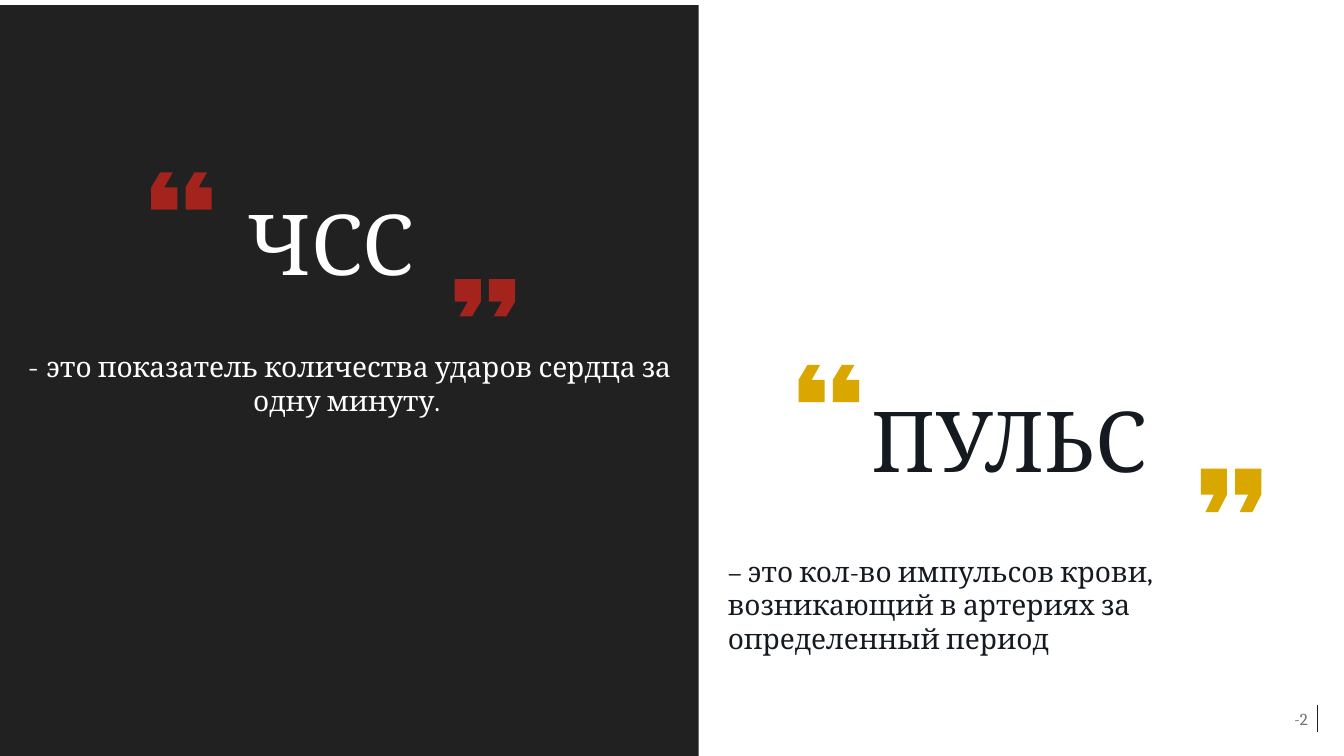
"""Build the slide that sets heart rate beside pulse."""
from lxml.etree import SubElement
from pptx import Presentation
from pptx.dml.color import RGBColor
from pptx.enum.shapes import MSO_CONNECTOR, MSO_SHAPE
from pptx.enum.text import MSO_ANCHOR, MSO_AUTO_SIZE, PP_ALIGN
from pptx.oxml.ns import qn
from pptx.util import Inches, Pt

COLORS = {
    "panel": "212121",
    "white": "FFFFFF",
    "ink": "151A20",
    "grey": "767171",
    "red": "DE241C",
    "gold": "DAA600",
}
PANEL = (0, 0.05, 6.93, 7.5)
RATE_RUNS = [
    ("- ", "Quicksand"),
    ("это показатель количества ударов сердца за одну минуту. ", "Cambria"),
]
TEXTS = [
    {"text": "ЧСС", "at": (2.36, 1.71, 2.09, 1.5), "size": 60, "color": "white",
     "anchor": MSO_ANCHOR.MIDDLE, "spacing": 0.9},
    {"text": "ПУЛЬС", "at": (8.55, 3.8, 3.15, 1.11), "size": 60, "color": "ink",
     "wrap": False, "fit": MSO_AUTO_SIZE.SHAPE_TO_FIT_TEXT},
    {"text": "– это кол-во импульсов крови, возникающий в артериях за определенный период",
     "at": (7.12, 5.45, 6.2, 0.77), "size": 20, "color": "ink",
     "fit": MSO_AUTO_SIZE.SHAPE_TO_FIT_TEXT},
    {"text": "-2", "at": (12.18, 6.98, 0.89, 0.4), "size": 12, "color": "grey",
     "align": PP_ALIGN.RIGHT},
]
QUOTES = [
    {"at": (1.5, 1.71), "height": 0.37, "color": "red", "opacity": 70, "opening": True},
    {"at": (4.51, 2.77), "height": 0.37, "color": "red", "opacity": 70, "opening": False},
    {"at": (11.91, 4.65), "height": 0.43, "color": "gold", "opacity": 100, "opening": False},
    {"at": (7.92, 3.62), "height": 0.37, "color": "gold", "opacity": 100, "opening": True},
]
MARK_WIDTH = 0.26
MARK_STEP = 0.34
MARK_OUTLINE = [(0, 0), (0, 0.6), (0.5, 0.6), (0.18, 1), (0.66, 1), (1, 0.6), (1, 0)]


def color_of(name):
    return RGBColor.from_string(COLORS[name])


def paint(shape, color):
    shape.shadow.inherit = False
    shape.fill.solid()
    shape.fill.fore_color.rgb = color_of(color)
    shape.line.fill.background()


def add_span(para, text, font, size, color):
    span = para.add_run()
    span.text = text
    span.font.name = font
    span.font.size = Pt(size)
    span.font.color.rgb = color_of(color)


def add_panel(page):
    panel = page.shapes.add_shape(MSO_SHAPE.RECTANGLE, *map(Inches, PANEL))
    paint(panel, "panel")
    panel.text_frame.word_wrap = True
    panel.text_frame.vertical_anchor = MSO_ANCHOR.MIDDLE
    para = panel.text_frame.paragraphs[0]
    para.alignment = PP_ALIGN.CENTER
    for text, font in RATE_RUNS:
        add_span(para, text, font, 20, "white")


def add_quote(page, quote):
    left, top = quote["at"]
    for index in range(2):
        points = [
            (Inches(left + index * MARK_STEP + x * MARK_WIDTH),
             Inches(top + y * quote["height"]))
            for x, y in MARK_OUTLINE
        ]
        outline = page.shapes.build_freeform(*points[0])
        outline.add_line_segments(points[1:], close=True)
        mark = outline.convert_to_shape()
        paint(mark, quote["color"])
        mark.rotation = 180 if quote["opening"] else 0
        if quote["opacity"] < 100:
            fill = next(mark.element.spPr.iter(qn("a:srgbClr")))
            SubElement(fill, qn("a:alpha"), val=str(quote["opacity"] * 1000))


def add_text(page, item):
    box = page.shapes.add_textbox(*map(Inches, item["at"]))
    frame = box.text_frame
    frame.word_wrap = item.get("wrap", True)
    frame.auto_size = item.get("fit", MSO_AUTO_SIZE.NONE)
    frame.vertical_anchor = item.get("anchor", MSO_ANCHOR.TOP)
    para = frame.paragraphs[0]
    para.alignment = item.get("align", PP_ALIGN.LEFT)
    para.line_spacing = item.get("spacing", 1.0)
    add_span(para, item["text"], "Cambria", item["size"], item["color"])


def add_page_rule(page):
    rule = page.shapes.add_connector(
        MSO_CONNECTOR.STRAIGHT, *map(Inches, (13.07, 7.26, 13.07, 6.99)))
    rule.line.color.rgb = color_of("panel")
    rule.line.width = Pt(1)
    SubElement(rule.element.spPr, qn("a:effectLst"))


def main():
    deck = Presentation()
    deck.slide_width, deck.slide_height = Inches(13.33), Inches(7.5)
    page = deck.slides.add_slide(deck.slide_layouts[6])
    page.background.fill.solid()
    page.background.fill.fore_color.rgb = color_of("white")
    add_page_rule(page)
    add_panel(page)
    for quote in QUOTES:
        add_quote(page, quote)
    for item in TEXTS:
        add_text(page, item)
    deck.save("out.pptx")


if __name__ == "__main__":
    main()
